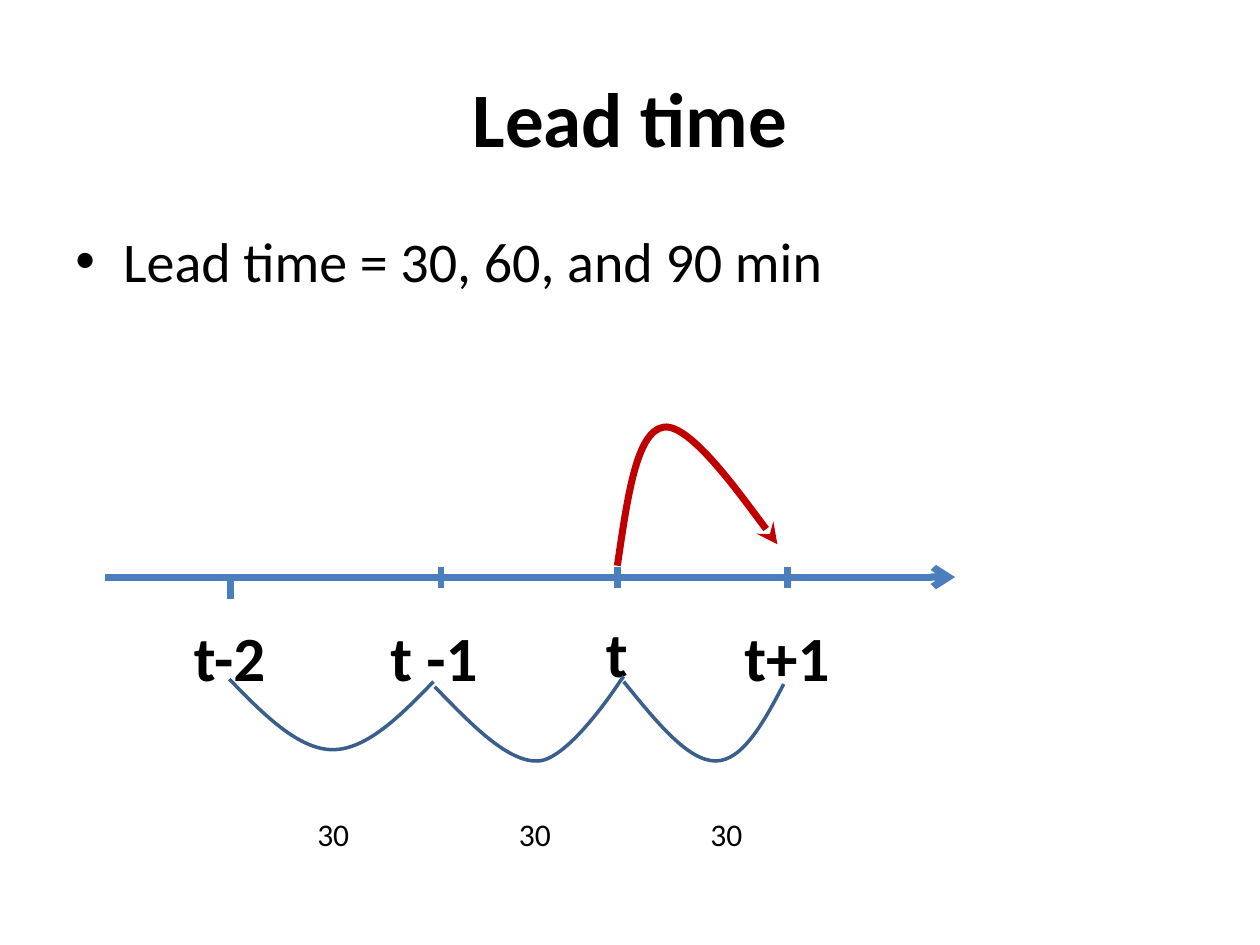
from pptx import Presentation
from pptx.dml.color import RGBColor
from pptx.enum.shapes import MSO_CONNECTOR
from pptx.enum.text import MSO_ANCHOR, PP_ALIGN
from pptx.oxml.ns import qn
from pptx.util import Inches, Pt
from lxml.etree import SubElement

FONT = "Calibri"
BLACK, BLUE, NAVY, RED = "000000", "4B7EBC", "3A5F8C", "C00000"

TITLE = "Lead time"
BULLET = "Lead time = 30, 60, and 90 min"

AXIS_Y, AXIS_START, AXIS_END = 4.58, 0.83, 7.58
TICK_LENGTH = 0.17
TICKS = [(1.83, AXIS_Y), (3.5, 4.5), (4.9, 4.5), (6.25, 4.5)]  # x, top
TICK_LABELS = [  # text, left, top, width
    ("t-2", 1.44, 4.86, 0.79),
    ("t -1", 3.0, 4.86, 0.9),
    ("t", 4.71, 4.83, 0.38),
    ("t+1", 5.81, 4.86, 0.88),
]
INTERVAL, INTERVAL_LEFTS = "30", [2.42, 4.02, 5.54]

# Start point, then cubic segments: two control points and an end point
FORECAST = [(4.9, 4.49),
            (4.98, 3.95), (5.05, 3.42), (5.27, 3.39),
            (5.48, 3.36), (6.17, 4.32), (6.17, 4.32)]
HOPS = [
    [(1.82, 5.39),
     (2.09, 5.67), (2.37, 5.95), (2.64, 5.95),
     (2.91, 5.95), (3.18, 5.68), (3.44, 5.41)],
    [(3.45, 5.45),
     (3.74, 5.75), (4.03, 6.05), (4.27, 6.04),
     (4.52, 6.03), (4.92, 5.41), (4.92, 5.41),
     (4.92, 5.41), (4.95, 5.37), (4.95, 5.37)],
    [(4.95, 5.41),
     (5.21, 5.73), (5.46, 6.04), (5.68, 6.04),
     (5.89, 6.04), (6.06, 5.74), (6.22, 5.43)],
]


def rgb(color):
    return RGBColor.from_string(color)


def style_line(sp, color, width, arrow=None):
    sp.line.color.rgb = rgb(color)
    sp.line.width = Pt(width)
    if arrow:
        SubElement(sp.line._get_or_add_ln(), qn("a:tailEnd"), type=arrow)


def style_text(p, size, bold=False):
    for r in p.runs:
        r.font.name, r.font.size, r.font.bold = FONT, Pt(size), bold
        r.font.color.rgb = rgb(BLACK)


def add_text(text, left, top, width, height, size, bold=False, wrap=False):
    tf = s.shapes.add_textbox(*map(Inches, (left, top, width, height))).text_frame
    tf.word_wrap = wrap
    tf.text = text
    style_text(tf.paragraphs[0], size, bold)
    return tf.paragraphs[0]


def add_line(x1, y1, x2, y2, arrow=None):
    line = s.shapes.add_connector(MSO_CONNECTOR.STRAIGHT,
                                  *map(Inches, (x1, y1, x2, y2)))
    style_line(line, BLUE, 4, arrow)
    SubElement(line._element.spPr, qn("a:effectLst"))


def add_curve(knots, color, width, arrow=None):
    """Build an outline through the end points, then bend each side into a cubic."""
    points = [(Inches(x), Inches(y)) for x, y in knots]
    builder = s.shapes.build_freeform(*points[0])
    builder.add_line_segments(points[3::3], close=False)
    curve = builder.convert_to_shape()
    outline = next(curve._element.iter(qn("a:path")))
    for side in outline.findall(qn("a:lnTo")):
        outline.remove(side)
    for i in range(1, len(points), 3):
        cubic = SubElement(outline, qn("a:cubicBezTo"))
        for x, y in points[i:i + 3]:
            SubElement(cubic, qn("a:pt"), x=str(x - curve.left), y=str(y - curve.top))
    curve.shadow.inherit = False
    curve.fill.background()
    style_line(curve, color, width, arrow)


prs = Presentation()
prs.slide_width, prs.slide_height = Inches(10), Inches(7.5)
s = prs.slides.add_slide(prs.slide_layouts[5])

title = s.shapes.title
title.left, title.top, title.width, title.height = map(Inches, (0.5, 0.3, 9, 1.25))
title.text_frame.text = TITLE
title.text_frame.vertical_anchor = MSO_ANCHOR.MIDDLE
title.text_frame.paragraphs[0].alignment = PP_ALIGN.CENTER
style_text(title.text_frame.paragraphs[0], 44, bold=True)

p = add_text(BULLET, 0.5, 1.75, 9, 4.95, 32, wrap=True)
pPr = p._p.get_or_add_pPr()
pPr.set("marL", str(Inches(0.38)))
pPr.set("indent", str(-Inches(0.38)))
SubElement(pPr, qn("a:buFont"), typeface="Arial")
SubElement(pPr, qn("a:buChar"), char="•")

add_line(AXIS_START, AXIS_Y, AXIS_END, AXIS_Y, arrow="arrow")
for x, top in TICKS:
    add_line(x, top, x, top + TICK_LENGTH)
for text, left, top, width in TICK_LABELS:
    add_text(text, left, top, width, 0.71, 36, bold=True)

add_curve(FORECAST, RED, 4, arrow="stealth")
for hop in HOPS:
    add_curve(hop, NAVY, 2)
for left in INTERVAL_LEFTS:
    add_text(INTERVAL, left, 6.42, 0.46, 0.4, 18)

prs.save("out.pptx")
